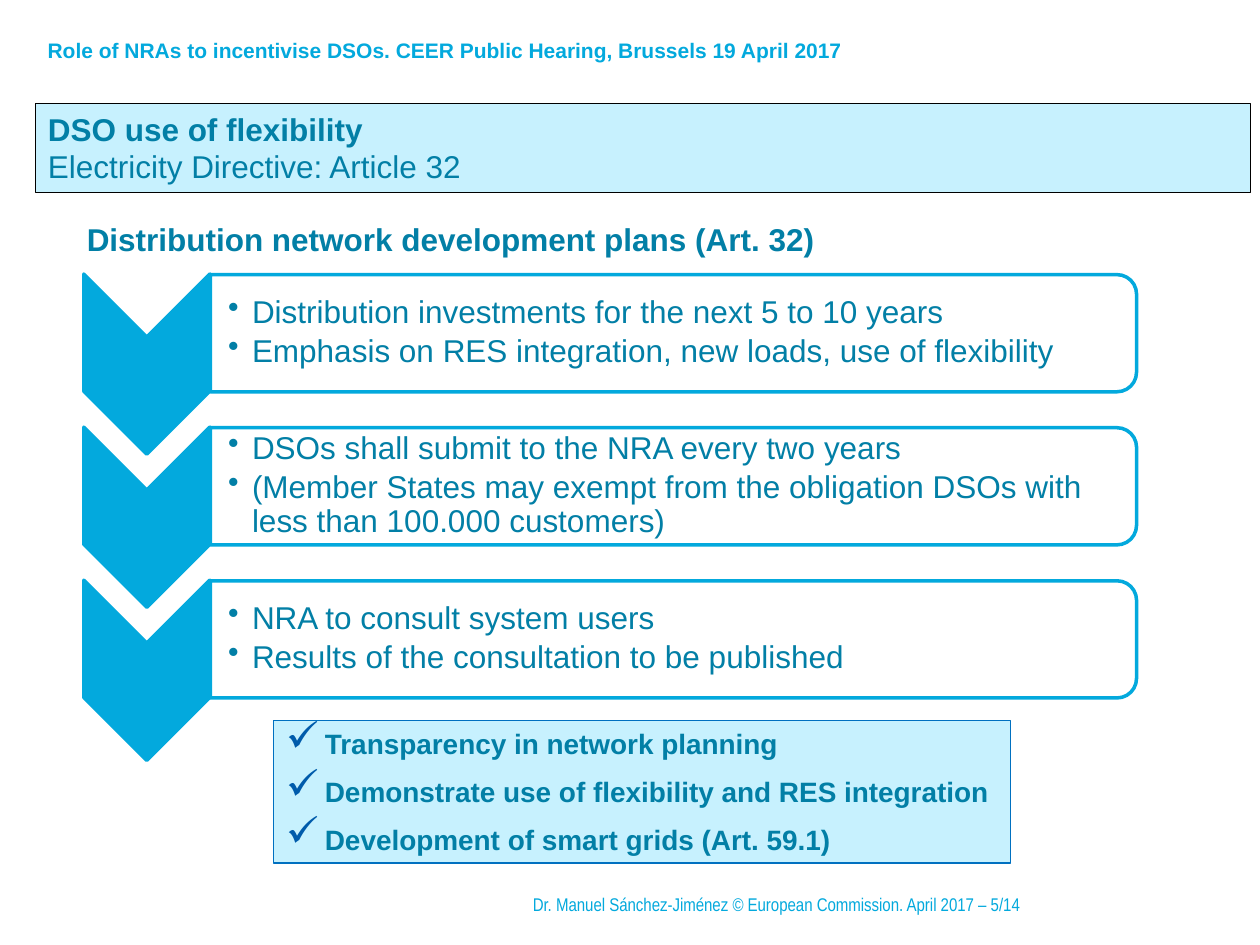
from lxml import etree
from pptx import Presentation
from pptx.dml.color import RGBColor
from pptx.enum import shapes, text
from pptx.oxml import ns
from pptx.util import Inches, Pt

CYAN = RGBColor(0x03, 0xA9, 0xDD)
TEAL = RGBColor(0x02, 0x7F, 0xA6)
PALE = RGBColor(0xC7, 0xF1, 0xFE)
BLUE = RGBColor(0x00, 0x70, 0xC0)
WHITE = RGBColor(0xFF, 0xFF, 0xFF)
BLACK = RGBColor(0x00, 0x00, 0x00)
TICK = RGBColor(0x00, 0x5B, 0xAB)


def write(box, lines, size, color, bold=False, font="Arial"):
    frame = box.text_frame
    frame.word_wrap = True
    for i, line in enumerate(lines):
        para = frame.paragraphs[0] if i == 0 else frame.add_paragraph()
        para.alignment = text.PP_ALIGN.LEFT
        run = para.add_run()
        run.text = line
        run.font.name = font
        run.font.size = Pt(size)
        run.font.bold = bold
        run.font.color.rgb = color
    return frame


def bullet(para, char, indent, color=None, scale=100):
    props = para._p.get_or_add_pPr()
    props.set("marL", str(Inches(indent)))
    props.set("indent", str(-Inches(indent)))
    if color is not None:
        tint = etree.SubElement(props, ns.qn("a:buClr"))
        etree.SubElement(tint, ns.qn("a:srgbClr"), val=str(color))
    etree.SubElement(props, ns.qn("a:buSzPct"), val=str(scale * 1000))
    etree.SubElement(props, ns.qn("a:buChar"), char=char)


deck = Presentation()
deck.slide_width, deck.slide_height = Inches(10), Inches(7.5)
slide = deck.slides.add_slide(deck.slide_layouts[5])
items = slide.shapes

event = items.add_textbox(Inches(0.28), Inches(0.25), Inches(9.13), Inches(0.3))
write(event, ["Role of NRAs to incentivise DSOs. CEER Public Hearing, Brussels 19 April 2017"],
      12, CYAN, True)

credit = items.add_textbox(Inches(4.13), Inches(6.98), Inches(4.25), Inches(0.4))
frame = write(credit, ["Dr. Manuel Sánchez-Jiménez © European Commission. April 2017 – 5/14"],
              10.5, CYAN, font="Arial Narrow")
frame.vertical_anchor = text.MSO_ANCHOR.MIDDLE

title = items.title
title.left, title.top = Inches(0.28), Inches(0.82)
title.width, title.height = Inches(9.64), Inches(0.71)
title.fill.solid()
title.fill.fore_color.rgb = PALE
title.line.color.rgb = BLACK
title.line.width = Pt(0.25)
frame = write(title, ["DSO use of flexibility", "Electricity Directive: Article 32"], 18, TEAL, True)
frame.auto_size = text.MSO_AUTO_SIZE.NONE
frame.vertical_anchor = text.MSO_ANCHOR.TOP
for para in frame.paragraphs:
    para.space_before = Pt(0)
frame.paragraphs[1].runs[0].font.bold = False

head = items.add_textbox(Inches(0.59), Inches(1.7), Inches(9.32), Inches(0.4))
write(head, ["Distribution network development plans (Art. 32)"], 18, TEAL, True)

steps = [
    ["Distribution investments for the next 5 to 10 years",
     "Emphasis on RES integration, new loads, use of flexibility"],
    ["DSOs shall submit to the NRA every two years",
     "(Member States may exempt from the obligation DSOs with less than 100.000 customers)"],
    ["NRA to consult system users",
     "Results of the consultation to be published"],
]
kind = shapes.MSO_SHAPE
for i, lines in enumerate(steps):
    drop = i * 1.215
    arrow = items.add_shape(kind.CHEVRON, Inches(0.45), Inches(2.39 + drop),
                            Inches(1.43), Inches(1))
    panel = items.add_shape(kind.ROUND_2_SAME_RECTANGLE, Inches(4.88), Inches(drop - 1.03),
                            Inches(0.93), Inches(7.35))
    for shape, fill in ((arrow, CYAN), (panel, WHITE)):
        shape.rotation = 90
        shape.shadow.inherit = False
        shape.fill.solid()
        shape.fill.fore_color.rgb = fill
        shape.line.color.rgb = CYAN
        shape.line.width = Pt(2)
    shade = panel._element.spPr.find(ns.qn("a:solidFill"))[0]
    etree.SubElement(shade, ns.qn("a:alpha"), val="90000")

    label = items.add_textbox(Inches(1.67), Inches(2.22 + drop), Inches(7.3), Inches(0.84))
    frame = write(label, lines, 18, TEAL)
    frame.vertical_anchor = text.MSO_ANCHOR.MIDDLE
    frame.margin_left = Inches(0.14)
    frame.margin_top = frame.margin_right = frame.margin_bottom = Inches(0.01)
    for para in frame.paragraphs:
        para.line_spacing = 0.9
        para.space_after = Pt(2.7)
        bullet(para, "•", 0.19)

goals = items.add_shape(kind.RECTANGLE, Inches(2.17), Inches(5.72), Inches(5.85), Inches(1.13))
goals.shadow.inherit = False
goals.fill.solid()
goals.fill.fore_color.rgb = PALE
goals.line.color.rgb = BLUE
goals.line.width = Pt(0.75)
frame = write(goals, ["Transparency in network planning",
                      "Demonstrate use of flexibility and RES integration",
                      "Development of smart grids (Art. 59.1)"], 16, TEAL, True)
frame.vertical_anchor = text.MSO_ANCHOR.TOP
for i, para in enumerate(frame.paragraphs):
    para.space_before = Pt(4 if i else 0)
    para.space_after = Pt(4)
    bullet(para, "✓", 0.31, TICK, 150)

deck.save("out.pptx")
